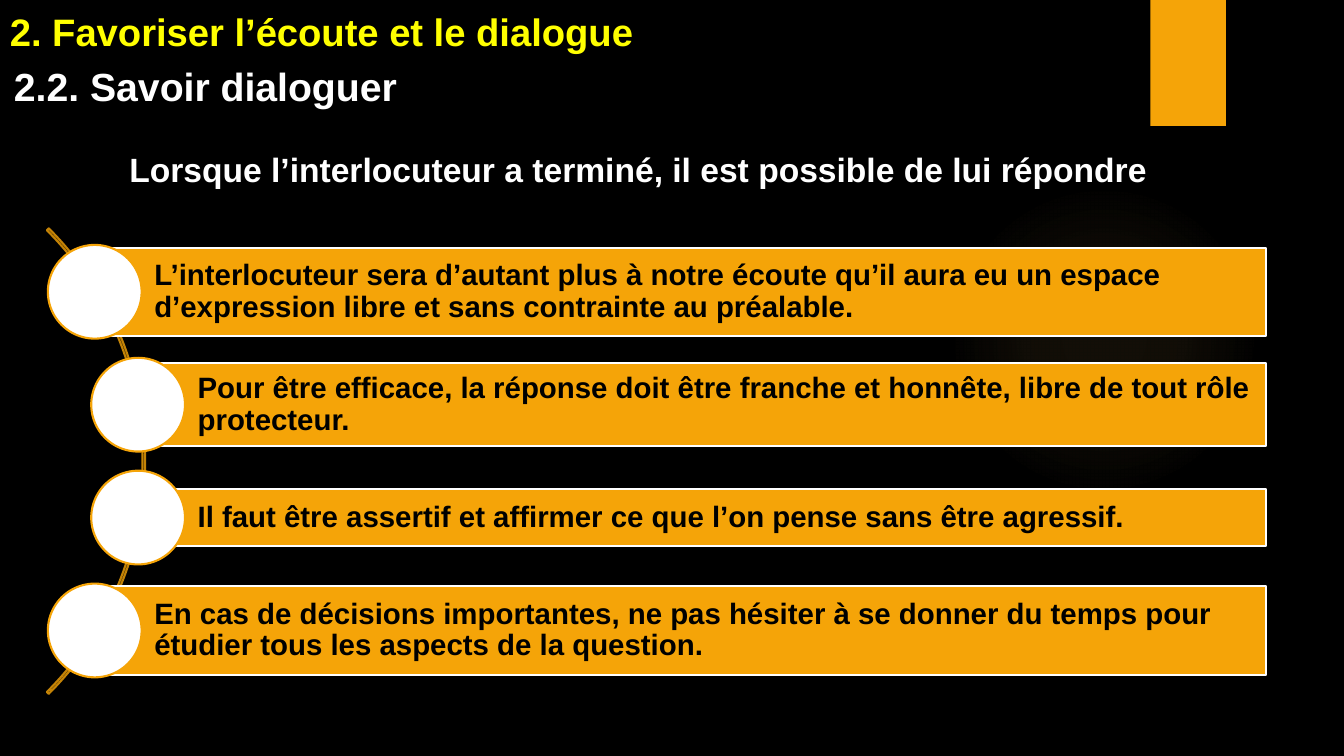
from lxml import etree
from pptx import Presentation
from pptx.dml.color import RGBColor
from pptx.enum.shapes import MSO_SHAPE
from pptx.enum.text import MSO_ANCHOR, PP_ALIGN
from pptx.oxml import parse_xml
from pptx.util import Inches, Pt

RECTANGLE, OVAL, BLOCK_ARC = MSO_SHAPE.RECTANGLE, MSO_SHAPE.OVAL, MSO_SHAPE.BLOCK_ARC
TOP, MIDDLE, BOTTOM = MSO_ANCHOR.TOP, MSO_ANCHOR.MIDDLE, MSO_ANCHOR.BOTTOM
LEFT, CENTER, JUSTIFY = PP_ALIGN.LEFT, PP_ALIGN.CENTER, PP_ALIGN.JUSTIFY

# Grid of square cells: 133.3 columns by 75 rows
CELL = Inches(0.1)
COLUMNS, ROWS = 133.3, 75

BLACK, WHITE, YELLOW = "000000", "FFFFFF", "FFFF00"
ORANGE, DARK_ORANGE, PALE_ORANGE = "F5A408", "C48306", "FAC96A"
DRAWING = "http://schemas.openxmlformats.org/drawingml/2006/main"

# Ring of advice: circles at equal steps, each bar starting at its circle's centre
CIRCLE_SIZE = 9.3
FIRST_CENTRE, CENTRE_STEP = 28.95, 11.2
OUTER_COLUMN, INNER_COLUMN, BAR_END = 9.4, 13.7, 125.6
ADVICE = [  # start column, bar height, wording
    (OUTER_COLUMN, 8.7, "L’interlocuteur sera d’autant plus à notre écoute qu’il aura eu "
     "un espace d’expression libre et sans contrainte au préalable."),
    (INNER_COLUMN, 8.2, "Pour être efficace, la réponse doit être franche et honnête, "
     "libre de tout rôle protecteur."),
    (INNER_COLUMN, 5.6, "Il faut être assertif et affirmer ce que l’on pense sans être agressif."),
    (OUTER_COLUMN, 8.9, "En cas de décisions importantes, ne pas hésiter à se donner du temps "
     "pour étudier tous les aspects de la question."),
]


def colour(value):
    return RGBColor.from_string(value)


def cells(*counts):
    return [round(count * CELL) for count in counts]


def write(shape, text, size, text_colour, align=LEFT, anchor=TOP, spacing=None, insets=None):
    frame = shape.text_frame
    frame.word_wrap = True
    frame.vertical_anchor = anchor
    if insets:
        (frame.margin_left, frame.margin_top,
         frame.margin_right, frame.margin_bottom) = cells(*insets)
    paragraph = frame.paragraphs[0]
    paragraph.text = text
    paragraph.alignment = align
    if spacing:
        paragraph.line_spacing = spacing
    font = paragraph.font
    font.name, font.size, font.bold = "Arial", Pt(size), True
    font.color.rgb = colour(text_colour)


def add_text(slide, box, text, size, text_colour, **layout):
    write(slide.shapes.add_textbox(*cells(*box)), text, size, text_colour, **layout)


def add_figure(slide, kind, box, fill=None, line=None):
    shape = slide.shapes.add_shape(kind, *cells(*box))
    shape.shadow.inherit = False
    if fill:
        shape.fill.solid()
        shape.fill.fore_color.rgb = colour(fill)
    else:
        shape.fill.background()
    if line:
        shape.line.color.rgb = colour(line)
        shape.line.width = Pt(1.5)
    else:
        shape.line.fill.background()
    return shape


def add_glow(slide, box):
    """Draw a faint radial light that fades out towards its edge."""
    glow = add_figure(slide, OVAL, box)
    stops = "".join(
        f'<a:gs pos="{position * 1000}"><a:srgbClr val="{PALE_ORANGE}">'
        f'<a:alpha val="{opacity * 1000}"/></a:srgbClr></a:gs>'
        for position, opacity in ((0, 7), (36, 6), (69, 0)))
    gradient = parse_xml(
        f'<a:gradFill xmlns:a="{DRAWING}" rotWithShape="1"><a:gsLst>{stops}</a:gsLst>'
        '<a:path path="circle"><a:fillToRect l="50000" t="50000" r="50000" b="50000"/></a:path>'
        '</a:gradFill>')
    properties = glow.fill._xPr
    old_fill = properties.find(etree.QName(DRAWING, "noFill").text)
    properties.replace(old_fill, gradient)


def add_arc(slide, box):
    arc = add_figure(slide, BLOCK_ARC, box, line=DARK_ORANGE)
    for index, value in enumerate((189, 27, 0.004)):
        arc.adjustments[index] = value


def add_advice(slide, centre, column, height, text):
    bar_box = (column, centre - height / 2, BAR_END - column, height)
    bar = add_figure(slide, RECTANGLE, bar_box, ORANGE, WHITE)
    write(bar, text, 21, BLACK, anchor=MIDDLE, spacing=0.9, insets=(5.9, 0.6, 0.6, 0.6))
    radius = CIRCLE_SIZE / 2
    circle_box = (column - radius, centre - radius, CIRCLE_SIZE, CIRCLE_SIZE)
    add_figure(slide, OVAL, circle_box, WHITE, ORANGE)


def main():
    presentation = Presentation()
    presentation.slide_width, presentation.slide_height = cells(COLUMNS, ROWS)
    slide = presentation.slides.add_slide(presentation.slide_layouts[6])
    slide.background.fill.solid()
    slide.background.fill.fore_color.rgb = colour(BLACK)

    # Backdrop
    add_glow(slide, (94.1, 18.3, 30.8, 30.8))
    add_figure(slide, RECTANGLE, (114.1, 0, 7.5, 12.5), ORANGE)

    # Headings
    add_text(slide, (0, 0, 131.4, 5.9), "2. Favoriser l’écoute et le dialogue",
             27.3, YELLOW, anchor=BOTTOM)
    add_text(slide, (0.4, 5.7, 67.3, 5.7), "2.2. Savoir dialoguer", 28, WHITE, align=JUSTIFY)
    add_text(slide, (2.6, 14.3, 121.4, 5),
             "Lorsque l’interlocuteur a terminé, il est possible de lui répondre",
             24, WHITE, align=CENTER)

    # Arc with its four pieces of advice
    add_arc(slide, (-50.9, 13.1, 65.3, 65.3))
    for index, (column, height, text) in enumerate(ADVICE):
        add_advice(slide, FIRST_CENTRE + index * CENTRE_STEP, column, height, text)

    presentation.save("out.pptx")


if __name__ == "__main__":
    main()
